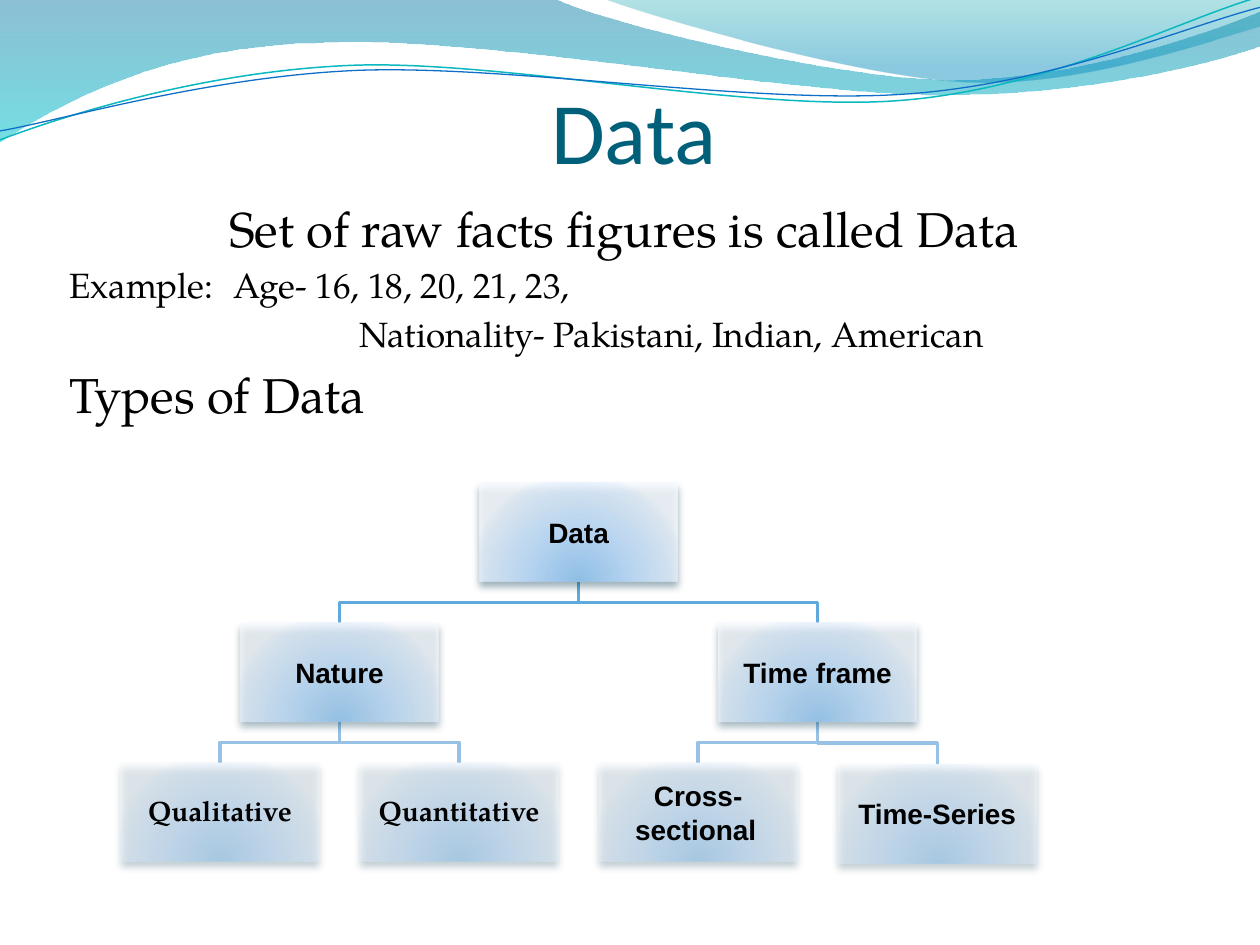
"""Build a slide that defines data and shows its types as a tree under a wave header."""
import pptx
import pptx.dml.color
import pptx.enum.shapes
import pptx.enum.text
import pptx.oxml
import pptx.oxml.ns
import pptx.util

Cm = pptx.util.Cm
Pt = pptx.util.Pt
ALIGN = pptx.enum.text.PP_ALIGN
ANCHOR = pptx.enum.text.MSO_ANCHOR
NAMESPACE = pptx.oxml.ns.nsdecls("a")
SERIF = "TeX Gyre Pagella"
DOWNWARD = '<a:lin ang="5400000" scaled="0"/>'
GLOW = '<a:path path="circle"><a:fillToRect l="50000" t="130000" r="50000" b="-30000"/></a:path>'


def color(value):
    return pptx.dml.color.RGBColor.from_string(value)


def fill_gradient(shape, stops, direction):
    shape.fill.background()
    properties = shape._element.spPr
    stop_xml = "".join(
        f'<a:gs pos="{position * 1000}"><a:srgbClr val="{value}">'
        f'<a:alpha val="{alpha * 1000}"/></a:srgbClr></a:gs>'
        for position, value, alpha in stops
    )
    gradient = pptx.oxml.parse_xml(
        f'<a:gradFill {NAMESPACE} rotWithShape="1">'
        f"<a:gsLst>{stop_xml}</a:gsLst>{direction}</a:gradFill>"
    )
    properties.replace(properties.find(pptx.oxml.ns.qn("a:noFill")), gradient)


presentation = pptx.Presentation()
presentation.slide_width = Cm(25.4)
presentation.slide_height = Cm(19.05)
slide = presentation.slides.add_slide(presentation.slide_layouts[6])

outlines = [
    {"points": [(0, -0.03), (11.18, -0.03), (12.09, 0.43, 16.87, 1.6, 19.25, 1.6),
                (21.67, 1.6, 24.33, 0.66, 25.4, 0.23), (25.43, 0.91),
                (24.97, 1.12, 22.1, 1.93, 18.95, 1.91), (15.8, 1.91, 9.7, 0.71, 6.53, 0.86),
                (3.28, 0.89, 1.17, 2.11, -0.03, 2.87)],
     "stops": [(0, "0074A1", 45), (100, "00C6CF", 55)]},
    {"points": [(12.17, -0.03), (12.93, 0.28, 17.32, 1.57, 19.53, 1.65),
                (21.74, 1.75, 24.41, 0.81, 25.4, 0.53), (25.4, 0)],
     "stops": [(0, "00A1A9", 30), (80, "008BBF", 45)]},
    {"points": [(0, 2.82), (1.22, 2.36, 4.01, 1.45, 7.04, 1.32),
                (10.03, 1.19, 15.06, 2.26, 18.11, 2.03), (21.16, 1.8, 23.83, 0.38, 25.35, -0.05)],
     "line": ("0AB8BF", 0.85)},
    {"points": [(0, 2.64), (1.19, 2.44, 4.17, 1.55, 7.19, 1.42),
                (10.24, 1.3, 15.16, 2.11, 18.21, 1.9), (21.23, 1.7, 23.9, 0.53, 25.4, 0.15)],
     "line": ("0F6FC6", 0.75)},
]

box_width, box_height = 3.99, 1.99
column_pitch, row_pitch = 4.82, 2.82
level_alphas = [80, 70, 50]
branch_colors = ["5EAADD", "97C1E5"]
tree = [
    ("Data", None, 1.5, 0, 0, "Arial"),
    ("Nature", "Data", 0.5, 1, 0, "Arial"),
    ("Qualitative", "Nature", 0, 2, 0, SERIF),
    ("Quantitative", "Nature", 1, 2, 0, SERIF),
    ("Time frame", "Data", 2.5, 1, 0, "Arial"),
    ("Cross-sectional\t", "Time frame", 2, 2, 0, "Arial"),
    ("Time-Series", "Time frame", 3, 2, 0.03, "Arial"),
]
corners = {
    label: (2.44 + column_pitch * column, 9.74 + row_pitch * level + shift)
    for label, parent, column, level, shift, font in tree
}
for label, parent, column, level, shift, font in tree:
    if parent:
        parent_x, child_x = (corners[name][0] + box_width / 2 for name in (parent, label))
        start_y, end_y = corners[parent][1] + box_height, corners[label][1]
        middle_y = (start_y + end_y) / 2
        outlines.append({
            "points": [(parent_x, start_y), (parent_x, middle_y),
                       (child_x, middle_y), (child_x, end_y)],
            "line": (branch_colors[level - 1], 2),
        })

for outline in outlines:
    segments = outline["points"]
    vertices = [(Cm(segment[-2]), Cm(segment[-1])) for segment in segments]
    builder = slide.shapes.build_freeform(*vertices[0])
    builder.add_line_segments(vertices[1:], close="stops" in outline)
    shape = builder.convert_to_shape()
    straight_lines = list(shape._element.iter(pptx.oxml.ns.qn("a:lnTo")))
    for straight_line, segment in zip(straight_lines, segments[1:]):
        if len(segment) == 6:
            point_xml = "".join(
                f'<a:pt x="{Cm(x) - shape.left}" y="{Cm(y) - shape.top}"/>'
                for x, y in zip(segment[::2], segment[1::2])
            )
            curve = pptx.oxml.parse_xml(
                f"<a:cubicBezTo {NAMESPACE}>{point_xml}</a:cubicBezTo>"
            )
            straight_line.getparent().replace(straight_line, curve)
    shape.shadow.inherit = False
    if "stops" in outline:
        fill_gradient(shape, outline["stops"], DOWNWARD)
        shape.line.fill.background()
    else:
        line_color, line_width = outline["line"]
        shape.fill.background()
        shape.line.color.rgb = color(line_color)
        shape.line.width = Pt(line_width)

title = slide.shapes.add_textbox(Cm(1.27), Cm(1.19), Cm(22.86), Cm(2.49))
body = slide.shapes.add_textbox(Cm(1.15), Cm(3.87), Cm(22.86), Cm(1.75))
hanging = (0.76, -0.76)
texts = [
    (title, {"vertical_anchor": ANCHOR.BOTTOM, "margin_left": 0, "margin_right": 0,
             "margin_bottom": 0},
     [("Data", {"alignment": ALIGN.CENTER},
       {"size": Pt(50), "name": "Calibri"}, "005F79", (0.15, 0))]),
    (body, {"vertical_anchor": ANCHOR.TOP}, [
        (text, {"alignment": alignment, "space_before": Pt(size * 0.2)},
         {"size": Pt(size), "name": SERIF}, "000000", indent)
        for text, alignment, size, indent in [
            ("Set of raw facts figures is called Data", ALIGN.CENTER, 28, hanging),
            ("Example:\tAge- 16, 18, 20, 21, 23,", ALIGN.LEFT, 20, hanging),
            ("Nationality- Pakistani, Indian, American", ALIGN.LEFT, 20, (5.84, 0)),
            ("Types of Data", ALIGN.LEFT, 28, hanging),
        ]
    ]),
]

label_format = {"vertical_anchor": ANCHOR.MIDDLE}
label_format.update({f"margin_{side}": Cm(0.03) for side in ("left", "top", "right", "bottom")})
for label, parent, column, level, shift, font in tree:
    left, top = corners[label]
    bounds = [Cm(length) for length in (left, top, box_width, box_height)]
    box = slide.shapes.add_shape(pptx.enum.shapes.MSO_SHAPE.RECTANGLE, *bounds)
    alpha = level_alphas[level]
    fill_gradient(box, [(0, "8BC2F1", alpha), (43, "B9DBFD", alpha),
                        (93, "EAF3FE", alpha), (100, "F8FBFF", alpha)], GLOW)
    box.line.fill.background()
    box.shadow.inherit = False
    effects = box._element.spPr.find(pptx.oxml.ns.qn("a:effectLst"))
    effects.append(pptx.oxml.parse_xml(
        f'<a:outerShdw {NAMESPACE} blurRad="{Pt(4.5)}" dist="{Pt(3)}" '
        'dir="5400000" rotWithShape="0"><a:srgbClr val="00374C"><a:alpha val="48000"/>'
        "</a:srgbClr></a:outerShdw>"
    ))
    paragraph_format = {"alignment": ALIGN.CENTER}
    if font == SERIF:
        paragraph_format.update(line_spacing=0.9, space_after=Pt(5.6))
    texts.append((slide.shapes.add_textbox(*bounds), label_format, [
        (label, paragraph_format,
         {"size": Pt(16), "name": font, "bold": True}, "000000", (0, 0))
    ]))

for shape, frame_format, paragraphs in texts:
    frame = shape.text_frame
    frame.word_wrap = True
    for name, value in frame_format.items():
        setattr(frame, name, value)
    for index, (text, paragraph_format, font_format, font_color, indent) in enumerate(paragraphs):
        paragraph = frame.add_paragraph() if index else frame.paragraphs[0]
        for name, value in paragraph_format.items():
            setattr(paragraph, name, value)
        properties = paragraph._p.get_or_add_pPr()
        for name, value in zip(("marL", "indent"), indent):
            properties.set(name, str(Cm(value)))
        run = paragraph.add_run()
        run.text = text
        for name, value in font_format.items():
            setattr(run.font, name, value)
        run.font.color.rgb = color(font_color)

presentation.save("out.pptx")
